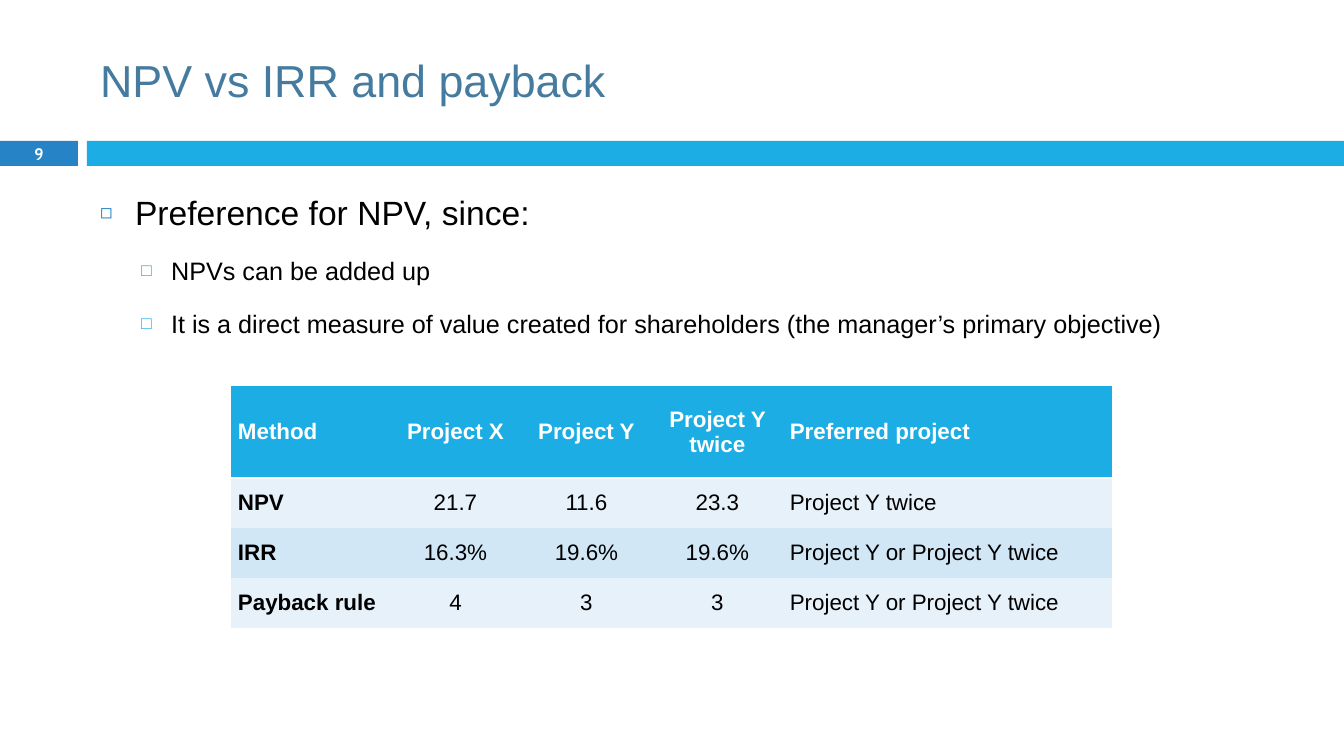
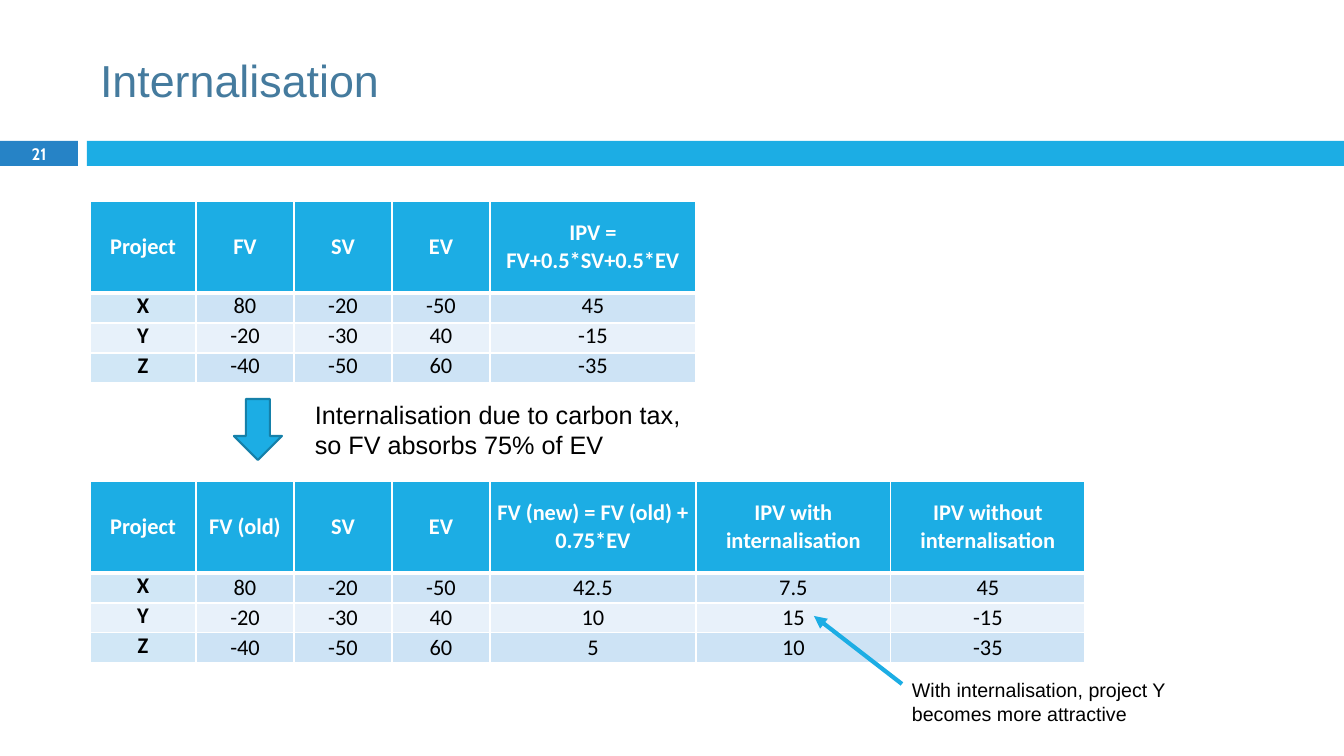
from dataclasses import dataclass
from typing import Any, Optional

import lxml.etree
import pptx
import pptx.dml.color
import pptx.enum.shapes
import pptx.enum.text
import pptx.oxml.ns
import pptx.util

EMU_PER_PX = 914400 / 100.8
SLIDE_WIDTH, SLIDE_HEIGHT = 1344, 756

# Shared colours and fonts
SKY, BLUE, STEEL, OUTLINE = "1CADE4", "2683C6", "457B9E", "1580A9"
WHITE, BLACK = "FFFFFF", "000000"
SANS, TABLE_FONT, NUMBER_FONT = "Arial", "Calibri", "Cabin"

Align = pptx.enum.text.PP_ALIGN
Anchor = pptx.enum.text.MSO_ANCHOR
AutoSize = pptx.enum.text.MSO_AUTO_SIZE
Preset = pptx.enum.shapes.MSO_SHAPE
Pt = pptx.util.Pt


@dataclass(frozen=True)
class Bullet:
    level: int
    text: str


@dataclass(frozen=True)
class BulletStyle:
    size: int
    margin: int
    hanging: int
    before: float
    symbol: str
    symbol_color: str
    symbol_percent: int


@dataclass(frozen=True)
class TableStyle:
    font: str
    inset: int
    grid: int
    header_rule: int
    header_gap: int
    label_bands: tuple[str, str]
    value_bands: tuple[str, str]


@dataclass(frozen=True)
class TableData:
    left: int
    top: int
    columns: tuple[int, ...]
    rows: tuple[int, ...]
    cells: tuple[tuple[str, ...], ...]
    style: TableStyle
    left_columns: tuple[int, ...] = ()
    exact_columns: int = 0  # leading columns with fixed line height


# Styles
BULLET_STYLES = (
    BulletStyle(24, 35, 35, 7, "◻", BLUE, 60),
    BulletStyle(18, 71, 30, 5.5, "□", SKY, 70),
)
PLAIN = TableStyle(SANS, 7, 0, 1, 2, ("E7F1FA", "D1E7F6"), ("E7F1FA", "D1E7F6"))
GRID = TableStyle(TABLE_FONT, 5, 1, 3, 3, ("D1E7F6", "E7F1FA"), ("CDE3F5", "E8F1FA"))

# Content
NPV_POINTS = (
    Bullet(0, "Preference for NPV, since:"),
    Bullet(1, "NPVs can be added up"),
    Bullet(1, "It is a direct measure of value created for shareholders "
              "(the manager’s primary objective)"),
)
METHODS = TableData(
    231, 386, (159, 131, 131, 131, 329), (92, 50, 50, 50),
    (
        ("Method", "Project X", "Project Y", "Project Y twice", "Preferred project"),
        ("NPV", "21.7", "11.6", "23.3", "Project Y twice"),
        ("IRR", "16.3%", "19.6%", "19.6%", "Project Y or Project Y twice"),
        ("Payback rule", "4", "3", "3", "Project Y or Project Y twice"),
    ),
    PLAIN, left_columns=(0, 4),
)
PROJECT_COLUMNS = (106, 98, 98, 98, 206)
PROJECT_ROWS = (92, 30, 30, 30)
BEFORE_TAX = TableData(
    90, 201, PROJECT_COLUMNS, PROJECT_ROWS,
    (
        ("Project", "FV", "SV", "EV", "IPV =\nFV+0.5*SV+0.5*EV"),
        ("X", "80", "-20", "-50", "45"),
        ("Y", "-20", "-30", "40", "-15"),
        ("Z", "-40", "-50", "60", "-35"),
    ),
    GRID, exact_columns=5,
)
AFTER_TAX = TableData(
    90, 481, PROJECT_COLUMNS + (195, 194), PROJECT_ROWS,
    (
        ("Project", "FV (old)", "SV", "EV", "FV (new) = FV (old) + 0.75*EV",
         "IPV with internalisation", "IPV without internalisation"),
        ("X", "80", "-20", "-50", "42.5", "7.5", "45"),
        ("Y", "-20", "-30", "40", "10", "15", "-15"),
        ("Z", "-40", "-50", "60", "5", "10", "-35"),
    ),
    GRID, exact_columns=1,
)


def px(length: int) -> int:
    return round(length * EMU_PER_PX)


def rgb(value: str) -> pptx.dml.color.RGBColor:
    return pptx.dml.color.RGBColor.from_string(value)


def add_xml(parent: Any, tag: str, **attributes: str) -> Any:
    return lxml.etree.SubElement(parent, pptx.oxml.ns.qn(tag), attributes)


def set_font(paragraph: Any, size: float, name: str, color: str,
             bold: bool = False) -> None:
    font = paragraph.font
    font.size, font.name, font.bold = Pt(size), name, bold
    font.color.rgb = rgb(color)


def place(shape: Any, left: int, top: int, width: int, height: int) -> None:
    shape.left, shape.top = px(left), px(top)
    shape.width, shape.height = px(width), px(height)


def add_block(slide: Any, preset: Any, box: tuple[int, int, int, int], fill: str,
              outline: Optional[str] = None) -> None:
    block = slide.shapes.add_shape(preset, *map(px, box))
    block.shadow.inherit = False
    block.fill.solid()
    block.fill.fore_color.rgb = rgb(fill)
    if outline:
        block.line.color.rgb = rgb(outline)
        block.line.width = Pt(1.5)
    else:
        block.line.fill.background()


def add_label(slide: Any, text: str, box: tuple[int, int, int, int], size: float) -> None:
    frame = slide.shapes.add_textbox(*map(px, box)).text_frame
    frame.word_wrap = True
    frame.auto_size = AutoSize.SHAPE_TO_FIT_TEXT
    frame.paragraphs[0].text = text
    set_font(frame.paragraphs[0], size, SANS, BLACK)


def add_page(deck: Any, layout: int, heading: str, number: str) -> Any:
    """Add a slide with the shared bands, title and slide number."""
    slide = deck.slides.add_slide(deck.slide_layouts[layout])
    add_block(slide, Preset.RECTANGLE, (0, 141, 78, 25), BLUE)
    add_block(slide, Preset.RECTANGLE, (87, 141, SLIDE_WIDTH - 87, 25), SKY)

    title = slide.shapes.title
    place(title, 90, 25, 1198, 109)
    title.text_frame.auto_size = AutoSize.NONE
    title.text_frame.vertical_anchor = Anchor.MIDDLE
    title.text_frame.text = heading
    title.text_frame.paragraphs[0].alignment = Align.LEFT
    set_font(title.text_frame.paragraphs[0], 32, SANS, STEEL)

    frame = slide.shapes.add_textbox(*map(px, (0, 140, 78, 27))).text_frame
    frame.word_wrap = True
    frame.vertical_anchor = Anchor.MIDDLE
    frame.text = number
    frame.paragraphs[0].alignment = Align.CENTER
    set_font(frame.paragraphs[0], 11.9, NUMBER_FONT, WHITE, True)
    return slide


def fill_bullets(body: Any, bullets: tuple[Bullet, ...]) -> None:
    frame = body.text_frame
    frame.auto_size = AutoSize.NONE
    for index, bullet in enumerate(bullets):
        style = BULLET_STYLES[bullet.level]
        paragraph = frame.add_paragraph() if index else frame.paragraphs[0]
        paragraph.text = bullet.text
        paragraph.level = bullet.level
        paragraph.line_spacing = 1.5
        paragraph.space_before = Pt(style.before)
        properties = paragraph._p.get_or_add_pPr()
        properties.set("marL", str(px(style.margin)))
        properties.set("indent", str(-px(style.hanging)))
        add_xml(add_xml(properties, "a:buClr"), "a:srgbClr", val=style.symbol_color)
        add_xml(properties, "a:buSzPct", val=str(style.symbol_percent * 1000))
        add_xml(properties, "a:buFont", typeface=SANS)
        add_xml(properties, "a:buChar", char=style.symbol)
        set_font(paragraph, style.size, SANS, BLACK)


def set_borders(cell: Any, side: int, top: int, bottom: int) -> None:
    properties = cell._tc.get_or_add_tcPr()
    for tag, width in (("L", side), ("R", side), ("T", top), ("B", bottom)):
        line = add_xml(properties, f"a:ln{tag}", w=str(Pt(width)))
        if width:
            add_xml(add_xml(line, "a:solidFill"), "a:srgbClr", val=WHITE)
        else:
            add_xml(line, "a:noFill")


def format_cell(cell: Any, data: TableData, row: int, column: int) -> None:
    style = data.style
    header = row == 0
    set_borders(cell, style.grid,
                style.header_rule if row == 1 else style.grid,
                style.header_rule if header else style.grid)
    bands = style.value_bands if column else style.label_bands
    cell.fill.solid()
    cell.fill.fore_color.rgb = rgb(SKY if header else bands[(row - 1) % 2])
    cell.vertical_anchor = Anchor.MIDDLE
    cell.margin_left = cell.margin_right = px(style.inset)
    cell.margin_top = cell.margin_bottom = 0

    paragraph = cell.text_frame.paragraphs[0]
    paragraph.text = data.cells[row][column]
    paragraph.alignment = Align.LEFT if column in data.left_columns else Align.CENTER
    if not header and column < data.exact_columns:
        paragraph.line_spacing = Pt(16)
    else:
        gap = Pt(style.header_gap if header else 2)
        paragraph.space_before = paragraph.space_after = gap
    set_font(paragraph, 16, style.font, WHITE if header else BLACK,
             header or column == 0)


def add_data_table(slide: Any, data: TableData) -> None:
    table = slide.shapes.add_table(
        len(data.rows), len(data.columns), px(data.left), px(data.top),
        px(sum(data.columns)), px(sum(data.rows))).table
    table.horz_banding = False
    for column, width in enumerate(data.columns):
        table.columns[column].width = px(width)
    for row, height in enumerate(data.rows):
        table.rows[row].height = px(height)
        for column in range(len(data.columns)):
            format_cell(table.cell(row, column), data, row, column)


def add_pointer(slide: Any, start: tuple[int, int], end: tuple[int, int]) -> None:
    pointer = slide.shapes.add_connector(
        pptx.enum.shapes.MSO_CONNECTOR.STRAIGHT, *map(px, start + end))
    pointer.line.color.rgb = rgb(SKY)
    pointer.line.width = Pt(3)
    add_xml(pointer.line._get_or_add_ln(), "a:tailEnd", type="triangle")
    add_xml(pointer._element.spPr, "a:effectLst")


def main() -> None:
    deck = pptx.Presentation()
    deck.slide_width, deck.slide_height = px(SLIDE_WIDTH), px(SLIDE_HEIGHT)

    # Comparison of methods
    comparison = add_page(deck, 1, "NPV vs IRR and payback", "9")
    body = comparison.placeholders[1]
    place(body, 90, 167, 1145, 543)
    fill_bullets(body, NPV_POINTS)
    add_data_table(comparison, METHODS)

    # Internalisation of external value
    internalisation = add_page(deck, 5, "Internalisation", "21")
    add_data_table(internalisation, BEFORE_TAX)
    add_block(internalisation, Preset.DOWN_ARROW, (234, 399, 48, 61), SKY, OUTLINE)
    add_label(internalisation,
              "Internalisation due to carbon tax,\nso FV absorbs 75% of EV",
              (305, 394, 501, 72), 18)
    add_data_table(internalisation, AFTER_TAX)
    add_pointer(internalisation, (902, 684), (814, 616))
    add_label(internalisation, "With internalisation, project Y becomes more attractive",
              (902, 673, 338, 57), 14)

    deck.save("out.pptx")


if __name__ == "__main__":
    main()
